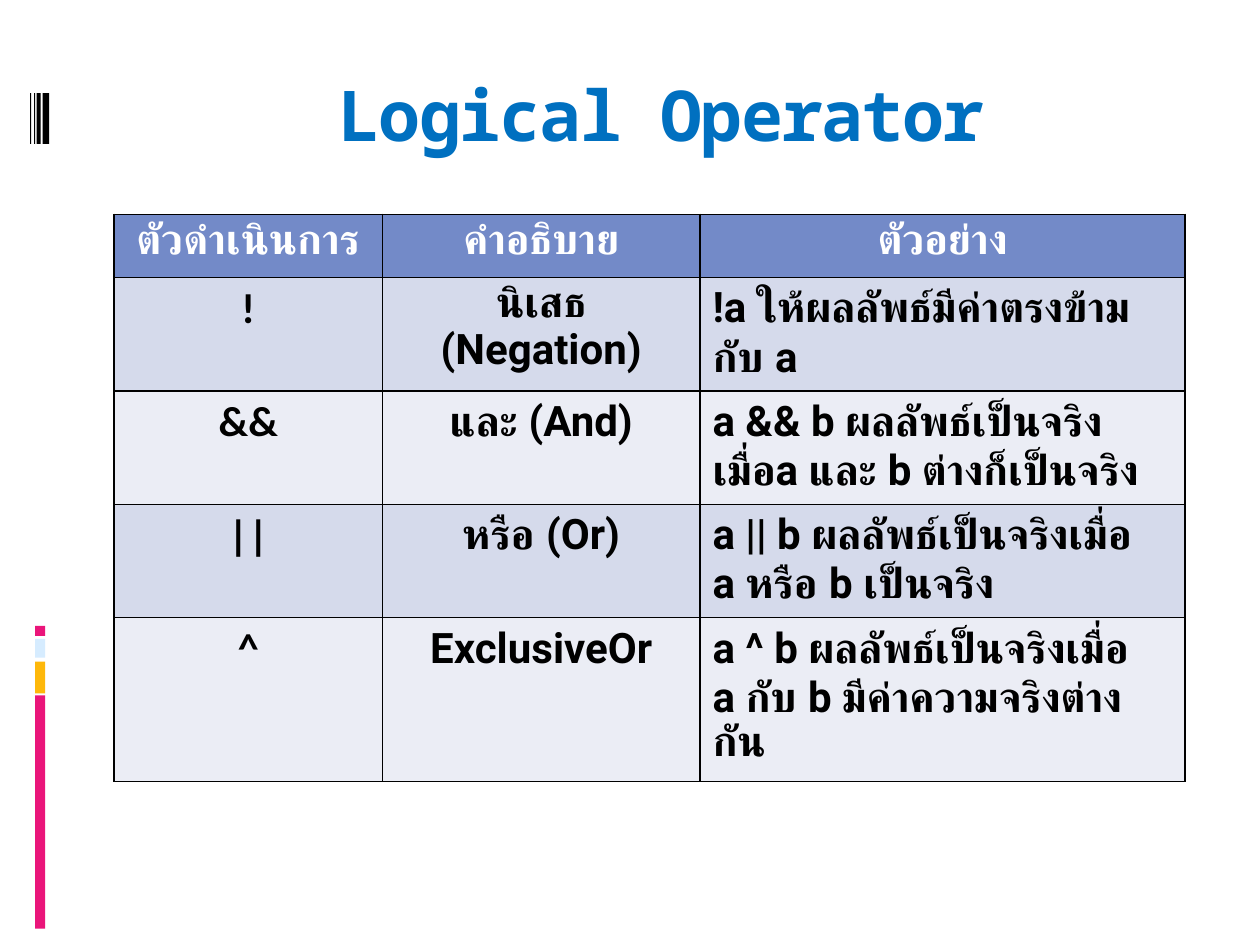
import dataclasses

import lxml.etree
import pptx
import pptx.dml.color
import pptx.enum.shapes
import pptx.enum.text
import pptx.oxml.ns
import pptx.util

Cm = pptx.util.Cm
Pt = pptx.util.Pt
RGB = pptx.dml.color.RGBColor.from_string
ALIGN = pptx.enum.text.PP_ALIGN
qn = pptx.oxml.ns.qn


@dataclasses.dataclass(frozen=True)
class Theme:
    title: str = "0070C0"
    header: str = "738AC8"
    bands: tuple = ("D5DAEB", "EBEDF5")
    ink: str = "000000"
    paper: str = "FFFFFF"
    pink: str = "EA157A"
    amber: str = "FEB80A"
    sky: str = "D6ECFF"
    title_font: str = "Noto Sans Mono"
    body_font: str = "Roboto"
    symbol_font: str = "Calibri"
    title_size: int = 40
    body_size: int = 24
    border: int = 1


class Page:
    def __init__(self, slide, theme):
        self.slide = slide
        self.theme = theme

    def set_text(self, paragraph, text, align, font, size, color):
        paragraph.text = text
        paragraph.alignment = align
        style = {"name": font, "size": Pt(size), "bold": True}
        for run in paragraph.runs:
            for key, value in style.items():
                setattr(run.font, key, value)
            run.font.color.rgb = RGB(color)

    def bar(self, left, top, width, height, color):
        rect = pptx.enum.shapes.MSO_SHAPE.RECTANGLE
        bar = self.slide.shapes.add_shape(
            rect, Cm(left), Cm(top), Cm(width), Cm(height))
        bar.shadow.inherit = False
        bar.fill.solid()
        bar.fill.fore_color.rgb = RGB(color)
        bar.line.fill.background()

    def title(self, text, left, top, width, height):
        box = self.slide.shapes.add_textbox(
            Cm(left), Cm(top), Cm(width), Cm(height))
        frame = box.text_frame
        layout = {"word_wrap": True, "margin_top": Cm(0.03),
                  "vertical_anchor": pptx.enum.text.MSO_ANCHOR.TOP}
        for key, value in layout.items():
            setattr(frame, key, value)
        heading = frame.paragraphs[0]
        self.set_text(heading, text, ALIGN.CENTER, self.theme.title_font,
                      self.theme.title_size, self.theme.title)
        # Letter spacing of -1 pt
        heading.runs[0]._r.get_or_add_rPr().set("spc", "-100")

    def borders(self, cell):
        properties = cell._tc.get_or_add_tcPr()
        for index, side in enumerate(("a:lnL", "a:lnR", "a:lnT", "a:lnB")):
            line = lxml.etree.Element(qn(side), w=str(Pt(self.theme.border)))
            fill = lxml.etree.SubElement(line, qn("a:solidFill"))
            lxml.etree.SubElement(fill, qn("a:srgbClr"), val=self.theme.ink)
            properties.insert(index, line)

    def table(self, rows, left, top, widths, row_height, height):
        theme = self.theme
        frame = self.slide.shapes.add_table(
            len(rows), len(widths), Cm(left), Cm(top),
            Cm(sum(widths)), Cm(height))
        table = frame.table
        for column, width in zip(table.columns, widths):
            column.width = Cm(width)
        # Rows grow with their text
        for row in table.rows:
            row.height = Cm(row_height)
        frame.height = Cm(height)

        for r, texts in enumerate(rows):
            header = r == 0
            fill = theme.header if header else theme.bands[(r - 1) % 2]
            color = theme.paper if header else theme.ink
            for c, text in enumerate(texts):
                cell = table.cell(r, c)
                cell.fill.solid()
                cell.fill.fore_color.rgb = RGB(fill)
                symbol = c == 0 and not header
                example = c == 2 and not header
                self.set_text(cell.text_frame.paragraphs[0], text,
                              ALIGN.LEFT if example else ALIGN.CENTER,
                              theme.symbol_font if symbol else theme.body_font,
                              theme.body_size, color)
                self.borders(cell)


OPERATORS = [
    ("ตัวดำเนินการ", "คำอธิบาย", "ตัวอย่าง"),
    ("!", "นิเสธ (Negation)", "!a ให้ผลลัพธ์มีค่าตรงข้ามกับ a"),
    ("&&", "และ (And)", "a && b ผลลัพธ์เป็นจริงเมื่อa และ b ต่างก็เป็นจริง"),
    ("||", "หรือ (Or)", "a || b ผลลัพธ์เป็นจริงเมื่อ \va หรือ b เป็นจริง"),
    ("^", "ExclusiveOr",
     "a ^ b ผลลัพธ์เป็นจริงเมื่อ \va กับ b มีค่าความจริงต่างกัน"),
]


def main():
    deck = pptx.Presentation()
    deck.slide_width, deck.slide_height = Cm(25.4), Cm(19.05)
    theme = Theme()
    page = Page(deck.slides.add_slide(deck.slide_layouts[6]), theme)

    # Coloured column at the lower left
    for top, height, color in ((14.02, 4.7, theme.pink),
                               (13.34, 0.64, theme.amber),
                               (12.88, 0.38, theme.sky),
                               (12.62, 0.2, theme.pink)):
        page.bar(0.71, top, 0.2, height, color)

    # Black stripes beside the title
    for left, width in ((0.86, 0.13), (0.74, 0.08), (0.69, 0.02), (0.61, 0.02)):
        page.bar(left, 1.88, width, 1.02, theme.ink)

    # Title and operator table
    page.title("Logical Operator", 2.54, 1.42, 21.59, 2.54)
    page.table(OPERATORS, 2.3, 4.32, (5.41, 6.4, 9.78), 1.04, 11.43)

    deck.save("out.pptx")


if __name__ == "__main__":
    main()
